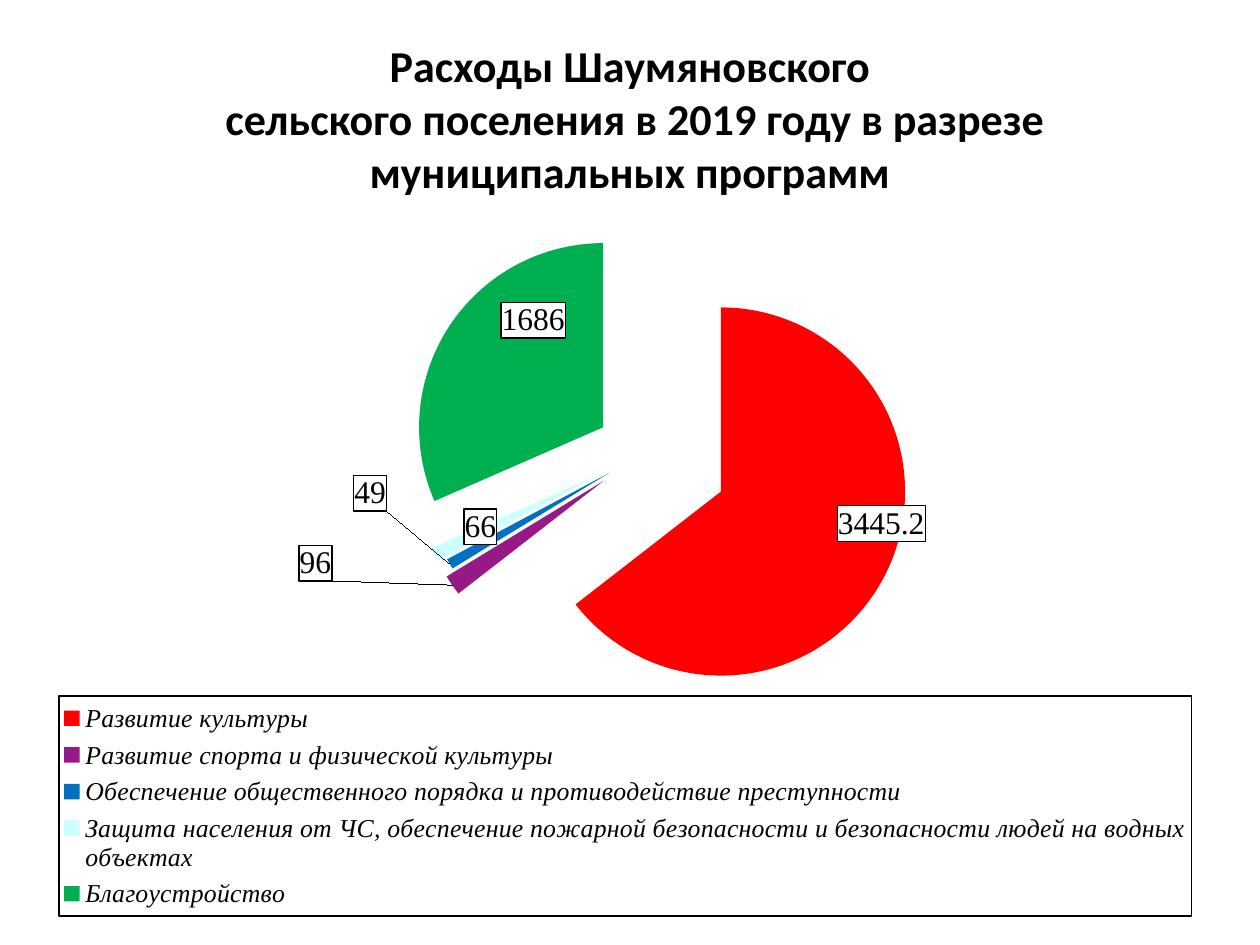
from pptx import Presentation
from pptx.chart.data import CategoryChartData
from pptx.dml.color import RGBColor
from pptx.enum.chart import XL_CHART_TYPE, XL_LABEL_POSITION, XL_LEGEND_POSITION
from pptx.enum.text import MSO_ANCHOR, PP_ALIGN
from pptx.oxml import parse_xml
from pptx.oxml.ns import nsdecls
from pptx.util import Inches, Pt

PIE = XL_CHART_TYPE.PIE
INSIDE_END = XL_LABEL_POSITION.INSIDE_END
BOTTOM = XL_LEGEND_POSITION.BOTTOM
MIDDLE = MSO_ANCHOR.MIDDLE
CENTER = PP_ALIGN.CENTER

BLACK = RGBColor(0x00, 0x00, 0x00)
RED = RGBColor(0xFF, 0x00, 0x00)
PURPLE = RGBColor(0x97, 0x19, 0x85)
BLUE = RGBColor(0x00, 0x70, 0xC0)
PALE_CYAN = RGBColor(0xCC, 0xFF, 0xFF)
GREEN = RGBColor(0x00, 0xB0, 0x50)

TITLE = ("Расходы Шаумяновского\v сельского поселения в 2019 году "
         "в разрезе муниципальных программ")

# Programme, spending, colour, explosion in percent, label shift (shares of the chart)
PROGRAMMES = [
    ("Развитие культуры", 3445.2, RED, 47, (0.04, -0.04)),
    ("Развитие спорта и физической культуры", 96, PURPLE, 26, (-0.14, 0)),
    ("Обеспечение общественного порядка и противодействие преступности",
     49, BLUE, 21, (-0.09, -0.07)),
    ("Защита населения от ЧС, обеспечение пожарной безопасности "
     "и безопасности людей на водных объектах", 66, PALE_CYAN, 26, (0.02, -0.01)),
    ("Благоустройство", 1686, GREEN, 26, (0.04, -0.04)),
]
SERIES_EXPLOSION = 26


def chart_xml(tag, inner="", attrs=""):
    return parse_xml(f"<c:{tag} {nsdecls('c', 'a')} {attrs}>{inner}</c:{tag}>")


def layout(target="", **values):
    """Manual chart layout; x, y, w and h are shares of the chart."""
    inner = f'<c:layoutTarget val="{target}"/>' if target else ""
    if "w" in values:
        inner += '<c:xMode val="edge"/><c:yMode val="edge"/>'
    inner += "".join(f'<c:{k} val="{v}"/>' for k, v in values.items())
    return chart_xml("layout", f"<c:manualLayout>{inner}</c:manualLayout>")


def explosion(percent):
    return chart_xml("explosion", attrs=f'val="{percent}"')


def frame():
    """White box with a thin black outline."""
    return chart_xml("spPr", '<a:solidFill><a:srgbClr val="FFFFFF"/></a:solidFill>'
                     f'<a:ln w="9525"><a:solidFill><a:srgbClr val="{BLACK}"/>'
                     '</a:solidFill></a:ln>')


class Deck:
    TITLE_FONT = dict(name="Calibri", size=Pt(25.2), bold=True)
    CHART_FONT = dict(name="Calibri", size=Pt(18))
    LABEL_FONT = dict(name="Times New Roman", size=Pt(18))
    LEGEND_FONT = dict(name="Times New Roman", size=Pt(14.7), italic=True)

    def __init__(self):
        self.prs = Presentation()
        self.prs.slide_width, self.prs.slide_height = Inches(10), Inches(7.5)
        self.s = self.prs.slides.add_slide(self.prs.slide_layouts[6])

    def box(self, x, y, w, h):
        """Shares of the slide's size to lengths."""
        width, height = self.prs.slide_width, self.prs.slide_height
        return int(x * width), int(y * height), int(w * width), int(h * height)

    def style(self, font, formats):
        for name, value in formats.items():
            setattr(font, name, value)
        font.color.rgb = BLACK

    def title(self, text, *area):
        tf = self.s.shapes.add_textbox(*self.box(*area)).text_frame
        tf.word_wrap, tf.vertical_anchor = True, MIDDLE
        p = tf.paragraphs[0]
        p.text, p.alignment = text, CENTER
        for r in p.runs:
            self.style(r.font, self.TITLE_FONT)

    def pie(self, programmes, *area):
        data = CategoryChartData()
        data.categories = [row[0] for row in programmes]
        data.add_series("Series 1", [row[1] for row in programmes])
        chart = self.s.shapes.add_chart(PIE, *self.box(*area), data).chart
        chart.has_title = False
        self.style(chart.font, self.CHART_FONT)
        plot = chart.plots[0]
        plot.vary_by_categories = True

        # Plot area
        plot_area = chart.element.xpath(".//c:plotArea")[0]
        for old in plot_area.xpath("./c:layout"):
            plot_area.remove(old)
        plot_area.insert(0, layout("inner", x=0.03, y=0.01, w=0.97, h=0.66))

        # Slices and their value labels
        series = plot.series[0]
        labels = series.data_labels
        labels.show_value, labels.position = True, INSIDE_END
        self.style(labels.font, self.LABEL_FONT)
        for i, (_, _, colour, percent, shift) in enumerate(programmes):
            point = series.points[i]
            fill = point.format.fill
            fill.solid()
            fill.fore_color.rgb = colour
            point.data_label.position = INSIDE_END
            self.style(point.data_label.font, self.LABEL_FONT)
            ser = series._element
            ser.xpath("./c:dPt/c:spPr")[i].addprevious(explosion(percent))
            label = ser.xpath("./c:dLbls/c:dLbl")[i]
            label.xpath("./c:idx")[0].addnext(layout(x=shift[0], y=shift[1]))
            label.xpath("./c:txPr")[0].addprevious(frame())
        series._element.xpath("./c:dPt")[0].addprevious(explosion(SERIES_EXPLOSION))
        self.legend(chart)

    def legend(self, chart):
        chart.has_legend = True
        legend = chart.legend
        legend.position, legend.include_in_layout = BOTTOM, False
        self.style(legend.font, self.LEGEND_FONT)
        element = chart.element.xpath(".//c:legend")[0]
        for old in element.xpath("./c:layout"):
            element.remove(old)
        element.xpath("./c:legendPos")[0].addnext(
            layout(x=0.002, y=0.685, w=0.994, h=0.313))
        element.xpath("./c:txPr")[0].addprevious(frame())


def main():
    deck = Deck()
    deck.title(TITLE, 0.05, 0.04, 0.9, 0.17)
    deck.pie(PROGRAMMES, 0.045, 0.227, 0.904, 0.744)
    deck.prs.save("out.pptx")


if __name__ == "__main__":
    main()
